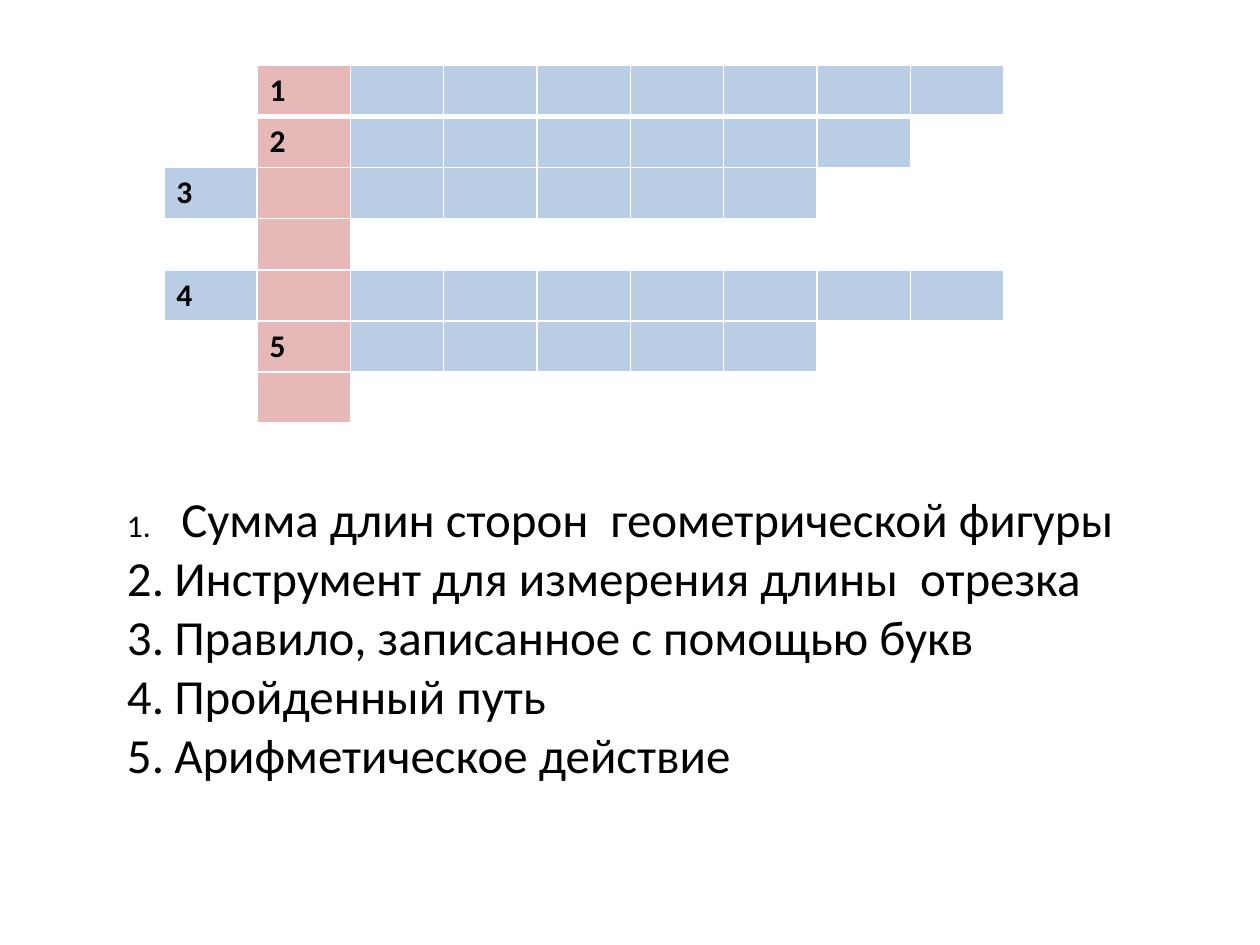
import pptx
import pptx.util
import pptx.dml.color
import pptx.oxml
import pptx.oxml.ns
from dataclasses import dataclass

Pt = pptx.util.Pt


@dataclass(frozen=True)
class Theme:
    """Colours, font and type sizes of the slide."""
    font: str = "Calibri"
    ink: str = "000000"
    paper: str = "FFFFFF"
    key: str = "E6B9B8"
    word: str = "B9CDE5"
    small: int = 18
    large: int = 28


THEME = Theme()
COLS = 9
KEY = 1
WORDS = [("1", 1, 8), ("2", 1, 7), ("3", 0, 7), ("", 1, 1),
         ("4", 0, 9), ("5", 1, 6), ("", 1, 1)]
CLUES = ["Сумма длин сторон  геометрической фигуры",
         "Инструмент для измерения длины  отрезка",
         "Правило, записанное с помощью букв",
         "Пройденный путь",
         "Арифметическое действие"]


def colour(code):
    """Return the colour for a hex code."""
    return pptx.dml.color.RGBColor.from_string(code)


def write(para, text, size=THEME.small, bold=False, ink=THEME.ink):
    """Add a run of formatted text to a paragraph."""
    run = para.add_run()
    run.text = text
    run.font.name = THEME.font
    run.font.size = Pt(size)
    run.font.bold = bold
    run.font.color.rgb = colour(ink)


def edge(cell, **widths):
    """Draw the cell borders, with widths in points by side."""
    props = cell._tc.get_or_add_tcPr()
    space = pptx.oxml.ns.nsdecls("a")
    for side, width in widths.items():
        props.append(pptx.oxml.parse_xml(
            f'<a:ln{side} {space} w="{Pt(width)}"><a:solidFill>'
            f'<a:srgbClr val="{THEME.paper}"/></a:solidFill></a:ln{side}>'))


def puzzle(slide, left, top, width, height):
    """Place the crossword grid in the given box."""
    frame = slide.shapes.add_table(
        len(WORDS), COLS, Pt(left), Pt(top), Pt(width), Pt(height))
    table = frame.table
    table.first_row = table.horz_banding = False
    for col in table.columns:
        col.width = Pt(width / COLS)
    for row, (label, start, count) in enumerate(WORDS):
        table.rows[row].height = Pt(height / len(WORDS))
        for col in range(COLS):
            cell = table.cell(row, col)
            edge(cell, L=1, R=1, T=3 if row == 1 else 1, B=3 if row == 0 else 1)
            inside = start <= col < start + count
            fill = THEME.key if col == KEY else THEME.word if inside else THEME.paper
            cell.fill.solid()
            cell.fill.fore_color.rgb = colour(fill)
            if label and col == start:
                write(cell.text_frame.paragraphs[0], label, bold=True)


def number(para, indent):
    """Number a paragraph with a hanging indent in points."""
    props = para._p.get_or_add_pPr()
    props.set("marL", str(Pt(indent)))
    props.set("indent", str(-Pt(indent)))
    props.append(pptx.oxml.parse_xml(
        f'<a:buAutoNum {pptx.oxml.ns.nsdecls("a")} type="arabicPeriod"/>'))


def clues(slide, left, top, width, height):
    """Place the numbered clues in the given box."""
    box = slide.shapes.add_textbox(Pt(left), Pt(top), Pt(width), Pt(height))
    frame = box.text_frame
    frame.word_wrap = True
    for row, clue in enumerate(CLUES):
        para = frame.add_paragraph() if row else frame.paragraphs[0]
        number(para, 27)
        if row == 0:
            write(para, " ")
        write(para, clue, size=THEME.large)


def main():
    """Build and save the slide."""
    deck = pptx.Presentation()
    deck.slide_width, deck.slide_height = Pt(720), Pt(540)
    slide = deck.slides.add_slide(deck.slide_layouts[6])
    puzzle(slide, 93.6, 37.4, 480, 204.4)
    clues(slide, 65.5, 275.8, 584, 177)
    deck.save("out.pptx")


if __name__ == "__main__":
    main()
